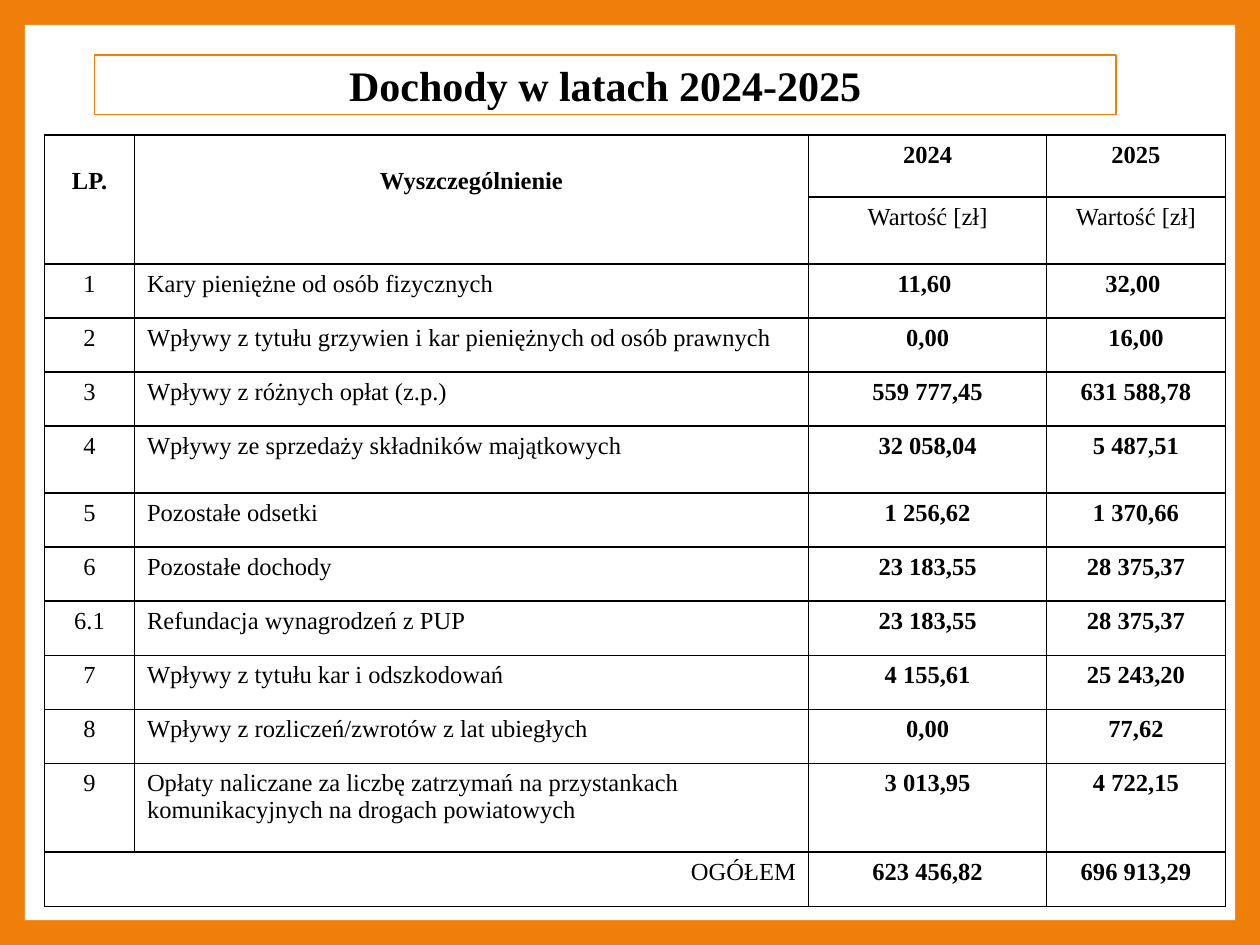
from dataclasses import dataclass

from lxml import etree
from pptx import Presentation
from pptx import util as u
from pptx.dml.color import RGBColor
from pptx.enum import shapes, text
from pptx.oxml.ns import qn


@dataclass(frozen=True)
class Theme:
    font: str = "Times New Roman"
    orange: str = "F07F09"
    white: str = "FFFFFF"
    black: str = "000000"
    title_size: int = 24
    table_size: int = 14


THEME = Theme()
LEFT, CENTER, RIGHT = text.PP_ALIGN.LEFT, text.PP_ALIGN.CENTER, text.PP_ALIGN.RIGHT

COL_WIDTHS = [1.81, 13.59, 4.8, 3.6]
ROW, TALL_ROW = 1.09, 1.35
ROW_HEIGHTS = [1.25, TALL_ROW, *[ROW] * 3, TALL_ROW, *[ROW] * 5, 1.79, ROW]
HEADER_DROP = 0.67  # top margin that lowers the merged headings by one line

HEADER = [
    ("LP.", "Wyszczególnienie", "2024", "2025"),
    ("", "", "Wartość [zł]", "Wartość [zł]"),
]
INCOME = [
    ("1", "Kary pieniężne od osób fizycznych", "11,60 ", "32,00 "),
    ("2", "Wpływy z tytułu grzywien i kar pieniężnych od osób prawnych", "0,00", "16,00"),
    ("3", "Wpływy z różnych opłat (z.p.)", "559 777,45", "631 588,78"),
    ("4", "Wpływy ze sprzedaży składników majątkowych", "32 058,04", "5 487,51"),
    ("5", "Pozostałe odsetki", "1 256,62", "1 370,66"),
    ("6", "Pozostałe dochody", "23 183,55", "28 375,37"),
    ("6.1", "Refundacja wynagrodzeń z PUP", "23 183,55", "28 375,37"),
    ("7", "Wpływy z tytułu kar i odszkodowań", "4 155,61", "25 243,20"),
    ("8", "Wpływy z rozliczeń/zwrotów z lat ubiegłych", "0,00", "77,62"),
    ("9", "Opłaty naliczane za liczbę zatrzymań na przystankach "
          "komunikacyjnych na drogach powiatowych", "3 013,95", "4 722,15"),
]
TOTAL = ("OGÓŁEM", "", "623 456,82", "696 913,29")


def rgb(value):
    return RGBColor.from_string(value)


def add_box(slide, left, top, width, height, fill=None, line=None):
    sp = slide.shapes.add_shape(shapes.MSO_SHAPE.RECTANGLE, u.Cm(left), u.Cm(top),
                                u.Cm(width), u.Cm(height))
    sp.shadow.inherit = False
    if fill:
        sp.fill.solid()
        sp.fill.fore_color.rgb = rgb(fill)
    else:
        sp.fill.background()
    if line:
        sp.line.color.rgb = rgb(line)
        sp.line.width = u.Pt(0.75)
    else:
        sp.line.fill.background()
    return sp


def write(tf, content, size, bold, align):
    tf.text = content
    tf.word_wrap = True
    p = tf.paragraphs[0]
    p.alignment = align
    for r in p.runs:
        r.font.name = THEME.font
        r.font.size = u.Pt(size)
        r.font.bold = bold
        r.font.color.rgb = rgb(THEME.black)


def add_borders(cell):
    tc_pr = cell._tc.get_or_add_tcPr()
    for side in ("a:lnL", "a:lnR", "a:lnT", "a:lnB"):
        ln = etree.SubElement(tc_pr, qn(side), w=str(u.Pt(1)))
        fill = etree.SubElement(ln, qn("a:solidFill"))
        etree.SubElement(fill, qn("a:srgbClr"), val=THEME.black)


def cell_style(row, col):
    """Return (bold, alignment) for a table position."""
    last = len(ROW_HEIGHTS) - 1
    if row < len(HEADER):
        return row == 0, CENTER
    if col >= 2:
        return True, CENTER
    if row == last:
        return False, RIGHT
    return False, CENTER if col == 0 else LEFT


def add_income_table(slide, left, top):
    rows = [*HEADER, *INCOME, TOTAL]
    table = slide.shapes.add_table(
        len(rows), len(COL_WIDTHS), u.Cm(left), u.Cm(top),
        u.Cm(sum(COL_WIDTHS)), u.Cm(sum(ROW_HEIGHTS))).table
    table.first_row = table.horz_banding = False
    for column, width in zip(table.columns, COL_WIDTHS):
        column.width = u.Cm(width)
    for row, height in zip(table.rows, ROW_HEIGHTS):
        row.height = u.Cm(height)

    # Cell text, borders and fill
    for i, values in enumerate(rows):
        for j, value in enumerate(values):
            cell = table.cell(i, j)
            write(cell.text_frame, value, THEME.table_size, *cell_style(i, j))
            add_borders(cell)
            cell.fill.background()

    # Merged headings and total label
    for j in (0, 1):
        table.cell(0, j).merge(table.cell(1, j))
        table.cell(0, j).margin_top = u.Cm(HEADER_DROP)
    last = len(rows) - 1
    table.cell(last, 0).merge(table.cell(last, 1))


def main():
    prs = Presentation()
    prs.slide_width, prs.slide_height = u.Cm(25.4), u.Cm(19.05)
    slide = prs.slides.add_slide(prs.slide_layouts[6])

    # Orange frame around a white page
    slide.background.fill.solid()
    slide.background.fill.fore_color.rgb = rgb(THEME.orange)
    add_box(slide, 0.5, 0.5, 24.4, 18.05, fill=THEME.white)

    # Title
    title = add_box(slide, 1.9, 1.11, 20.6, 1.2, line=THEME.orange)
    title.text_frame.vertical_anchor = text.MSO_ANCHOR.MIDDLE
    write(title.text_frame, "Dochody w latach 2024-2025", THEME.title_size, True, CENTER)

    # Income table
    add_income_table(slide, 0.9, 2.72)

    prs.save("out.pptx")


if __name__ == "__main__":
    main()
